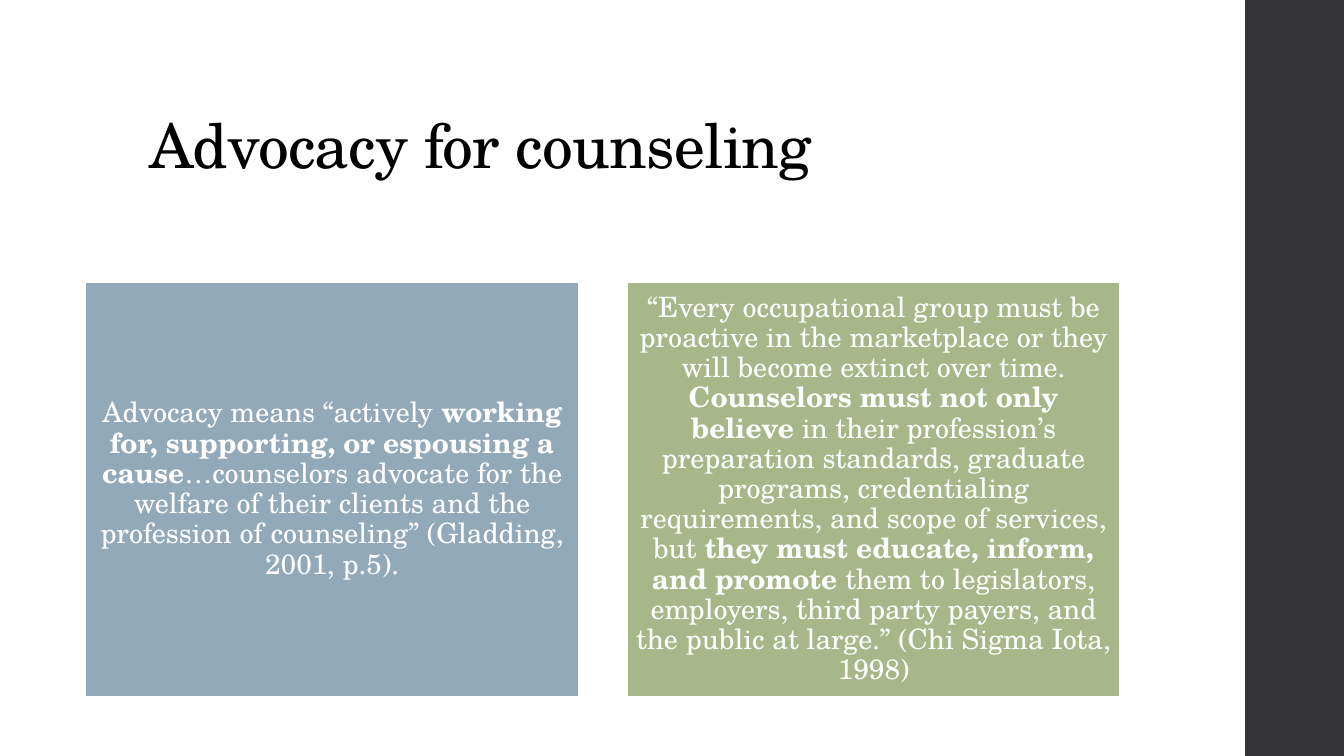
import pptx
import pptx.util
import pptx.dml.color
import pptx.enum.shapes
import pptx.enum.text

Inches, Pt = pptx.util.Inches, pptx.util.Pt
RGBColor = pptx.dml.color.RGBColor
ANCHOR = pptx.enum.text.MSO_ANCHOR
ALIGN = pptx.enum.text.PP_ALIGN
RECTANGLE = pptx.enum.shapes.MSO_SHAPE.RECTANGLE

FONT = "TeX Gyre Schola"
BLACK = RGBColor(0x00, 0x00, 0x00)
WHITE = RGBColor(0xFF, 0xFF, 0xFF)
CHARCOAL = RGBColor(0x35, 0x35, 0x37)
BLUE = RGBColor(0x92, 0xA9, 0xB9)
GREEN = RGBColor(0xA7, 0xB7, 0x89)

TITLE = "Advocacy for counseling"
# Each card: fill colour, then (text, bold) spans
CARDS = [
    (BLUE, [
        ("Advocacy means “actively ", False),
        ("working for, supporting, or espousing a cause", True),
        ("…counselors advocate for the welfare of their clients and the "
         "profession of counseling” (Gladding, 2001, p.5).", False),
    ]),
    (GREEN, [
        ("“Every occupational group must be proactive in the marketplace or "
         "they will become extinct over time. ", False),
        ("Counselors must not only believe", True),
        (" in their profession’s preparation standards, graduate programs, "
         "credentialing requirements, and scope of services, but ", False),
        ("they must educate, inform, and promote", True),
        (" them to legislators, employers, third party payers, and the public "
         "at large.” (Chi Sigma Iota, 1998)", False),
    ]),
]
CARD_LEFT, CARD_TOP, CARD_WIDTH, CARD_HEIGHT = 0.85, 2.8, 4.89, 4.11
CARD_GAP = 0.48
CARD_INSET = 0.08


def write_text(shape, spans, size, color, align, anchor, inset=None, spacing=None):
    """Fill a shape with one paragraph of (text, bold) spans; spacing is in points."""
    frame = shape.text_frame
    frame.word_wrap = True
    frame.auto_size = pptx.enum.text.MSO_AUTO_SIZE.NONE
    frame.vertical_anchor = anchor
    if inset is not None:
        frame.margin_left = frame.margin_right = Inches(inset)
        frame.margin_top = frame.margin_bottom = Inches(inset)
    para = frame.paragraphs[0]
    para.alignment = align
    para.line_spacing = 0.9
    for text, bold in spans:
        span = para.add_run()
        span.text = text
        span.font.name = FONT
        span.font.size = Pt(size)
        span.font.bold = bold
        span.font.color.rgb = color
        if spacing is not None:
            span.font._element.set("spc", str(round(spacing * 100)))


def add_rectangle(page, left, top, width, height, fill, line=None):
    box = page.shapes.add_shape(
        RECTANGLE, Inches(left), Inches(top), Inches(width), Inches(height))
    box.shadow.inherit = False
    box.fill.solid()
    box.fill.fore_color.rgb = fill
    if line is None:
        box.line.fill.background()
    else:
        box.line.color.rgb = line
        box.line.width = Pt(1.1)
    return box


def main():
    deck = pptx.Presentation()
    deck.slide_width, deck.slide_height = Inches(13.33), Inches(7.5)
    page = deck.slides.add_slide(deck.slide_layouts[5])

    add_rectangle(page, 12.35, 0, 0.98, 7.5, CHARCOAL)

    title = page.shapes.title
    title.left, title.top = Inches(1.38), Inches(0.4)
    title.width, title.height = Inches(10.6), Inches(1.45)
    write_text(title, [(TITLE, False)], size=44, color=BLACK, align=ALIGN.LEFT,
               anchor=ANCHOR.BOTTOM, spacing=-0.5)

    for index, (fill, spans) in enumerate(CARDS):
        left = CARD_LEFT + index * (CARD_WIDTH + CARD_GAP)
        card = add_rectangle(page, left, CARD_TOP, CARD_WIDTH, CARD_HEIGHT,
                             fill, line=WHITE)
        write_text(card, spans, size=20, color=WHITE, align=ALIGN.CENTER,
                   anchor=ANCHOR.MIDDLE, inset=CARD_INSET)

    deck.save("out.pptx")


if __name__ == "__main__":
    main()
